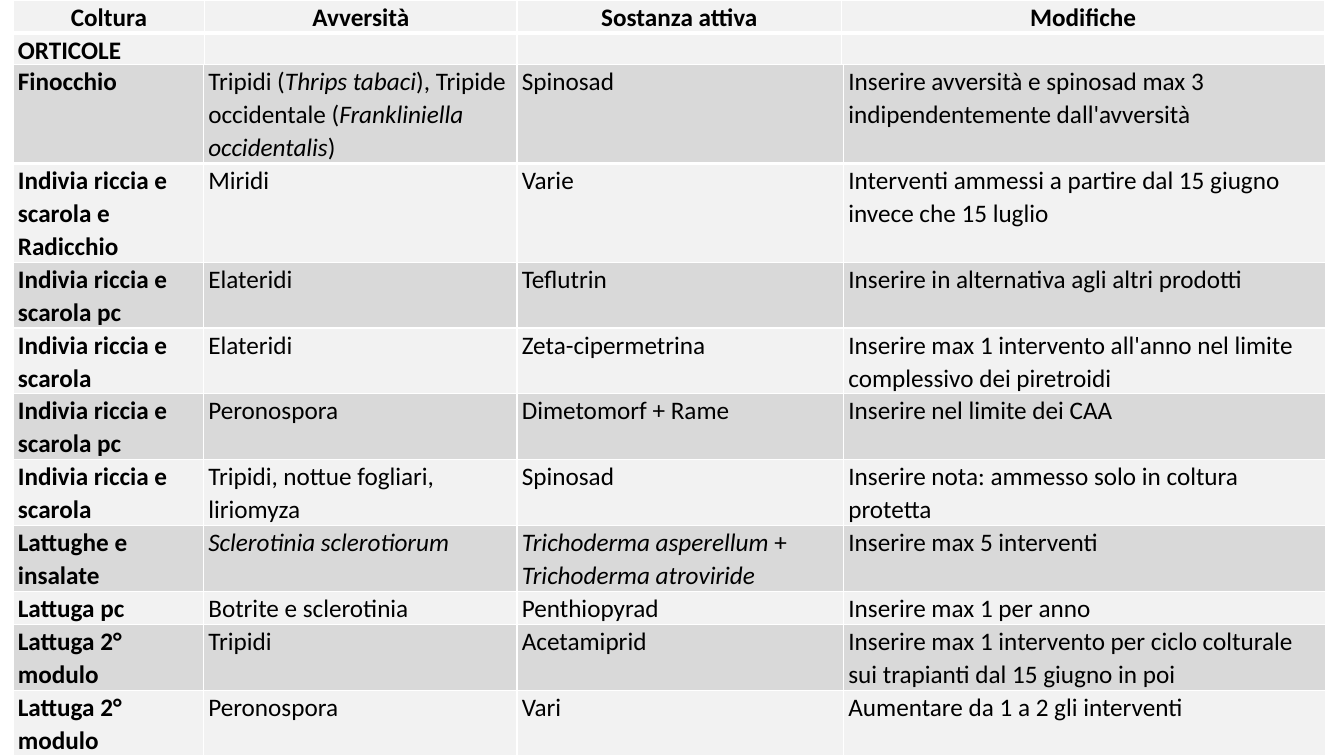
import dataclasses

import lxml.etree
import pptx
import pptx.dml.color
import pptx.enum.text
import pptx.oxml.ns
import pptx.util

Cm = pptx.util.Cm
Pt = pptx.util.Pt
qn = pptx.oxml.ns.qn


@dataclasses.dataclass
class Theme:
    font: str = "Calibri"
    size: int = 18
    ink: str = "000000"
    light: str = "F2F2F2"
    dark: str = "D9D9D9"
    rule: str = "FFFFFF"
    thin: int = 1
    thick: int = 3


def color(code):
    return pptx.dml.color.RGBColor.from_string(code)


class Deck:
    def __init__(self, theme):
        self.theme = theme
        self.file = pptx.Presentation()
        self.file.slide_width = Cm(33.87)
        self.file.slide_height = Cm(19.05)
        self.slide = self.file.slides.add_slide(self.file.slide_layouts[6])

    def edges(self, cell, base):
        props = cell._tc.get_or_add_tcPr()
        for side in "LRTB":
            width = base if side == "B" else self.theme.thin
            line = lxml.etree.SubElement(props, qn(f"a:ln{side}"), w=str(Pt(width)))
            fill = lxml.etree.SubElement(line, qn("a:solidFill"))
            lxml.etree.SubElement(fill, qn("a:srgbClr"), val=self.theme.rule)

    def text(self, cell, words, bold, align):
        cell.margin_left = cell.margin_right = Cm(0.12)
        cell.margin_top = cell.margin_bottom = 0
        para = cell.text_frame.paragraphs[0]
        para.alignment = align
        para.line_spacing = 1.07
        font = para.font
        font.name = self.theme.font
        font.size = Pt(self.theme.size)
        font.bold = bold
        font.color.rgb = color(self.theme.ink)
        for place, part in enumerate(words.split("*")):
            if part:
                run = para.add_run()
                run.text = part
                if place % 2:
                    run.font.italic = True

    def table(self, top, height, cols, rows, data, fills, head=False):
        frame = self.slide.shapes.add_table(
            len(rows), len(cols), Cm(0.33), Cm(top), Cm(sum(cols)), Cm(height))
        grid = frame.table
        grid.first_row = grid.horz_banding = False
        for col, width in zip(grid.columns, cols):
            col.width = Cm(width)
        for y, (row, tall) in enumerate(zip(data, rows)):
            grid.rows[y].height = Cm(tall)
            title = head and y == 0
            align = pptx.enum.text.PP_ALIGN.CENTER if title else None
            for x, words in enumerate(row):
                cell = grid.cell(y, x)
                self.edges(cell, self.theme.thick if y == 0 else self.theme.thin)
                self.text(cell, words, title or x == 0, align)
                cell.fill.solid()
                cell.fill.fore_color.rgb = color(fills[y % len(fills)])
                if head and y and x == 0:
                    cell.vertical_anchor = pptx.enum.text.MSO_ANCHOR.BOTTOM


HEAD = [
    ("Coltura", "Avversità", "Sostanza attiva", "Modifiche"),
    ("ORTICOLE", "", "", ""),
]
CROPS = [
    ("Finocchio",
     "Tripidi (*Thrips tabaci*), Tripide occidentale (*Frankliniella occidentalis*)",
     "Spinosad",
     "Inserire avversità e spinosad max 3 indipendentemente dall'avversità"),
    ("Indivia riccia e scarola e Radicchio", "Miridi", "Varie",
     "Interventi ammessi a partire dal 15 giugno invece che 15 luglio"),
    ("Indivia riccia e scarola pc", "Elateridi", "Teflutrin",
     "Inserire in alternativa agli altri prodotti"),
    ("Indivia riccia e scarola", "Elateridi", "Zeta-cipermetrina",
     "Inserire max 1 intervento all'anno nel limite complessivo dei piretroidi"),
    ("Indivia riccia e scarola pc", "Peronospora", "Dimetomorf + Rame",
     "Inserire nel limite dei CAA"),
    ("Indivia riccia e scarola", "Tripidi, nottue fogliari, liriomyza", "Spinosad",
     "Inserire nota: ammesso solo in coltura protetta"),
    ("Lattughe e insalate", "*Sclerotinia sclerotiorum*",
     "*Trichoderma asperellum *+ *Trichoderma atroviride*",
     "Inserire max 5 interventi"),
    ("Lattuga pc", "Botrite e sclerotinia", "Penthiopyrad",
     "Inserire max 1 per anno"),
    ("Lattuga 2° modulo", "Tripidi", "Acetamiprid",
     "Inserire max 1 intervento per ciclo colturale sui trapianti dal 15 giugno in poi"),
    ("Lattuga 2° modulo", "Peronospora", "Vari",
     "Aumentare da 1 a 2 gli interventi"),
]


def main():
    theme = Theme()
    deck = Deck(theme)
    deck.table(0, 1.63, [4.83, 7.87, 8.18, 12.17], [0.74, 0.71],
               HEAD, [theme.light], head=True)
    deck.table(1.63, 17.09, [4.8, 7.9, 8.23, 12.14],
               [1.78, 1.5] + [1.02] * 4 + [1.37, 0.53, 0.99, 1.02],
               CROPS, [theme.dark, theme.light])
    deck.file.save("out.pptx")


if __name__ == "__main__":
    main()
